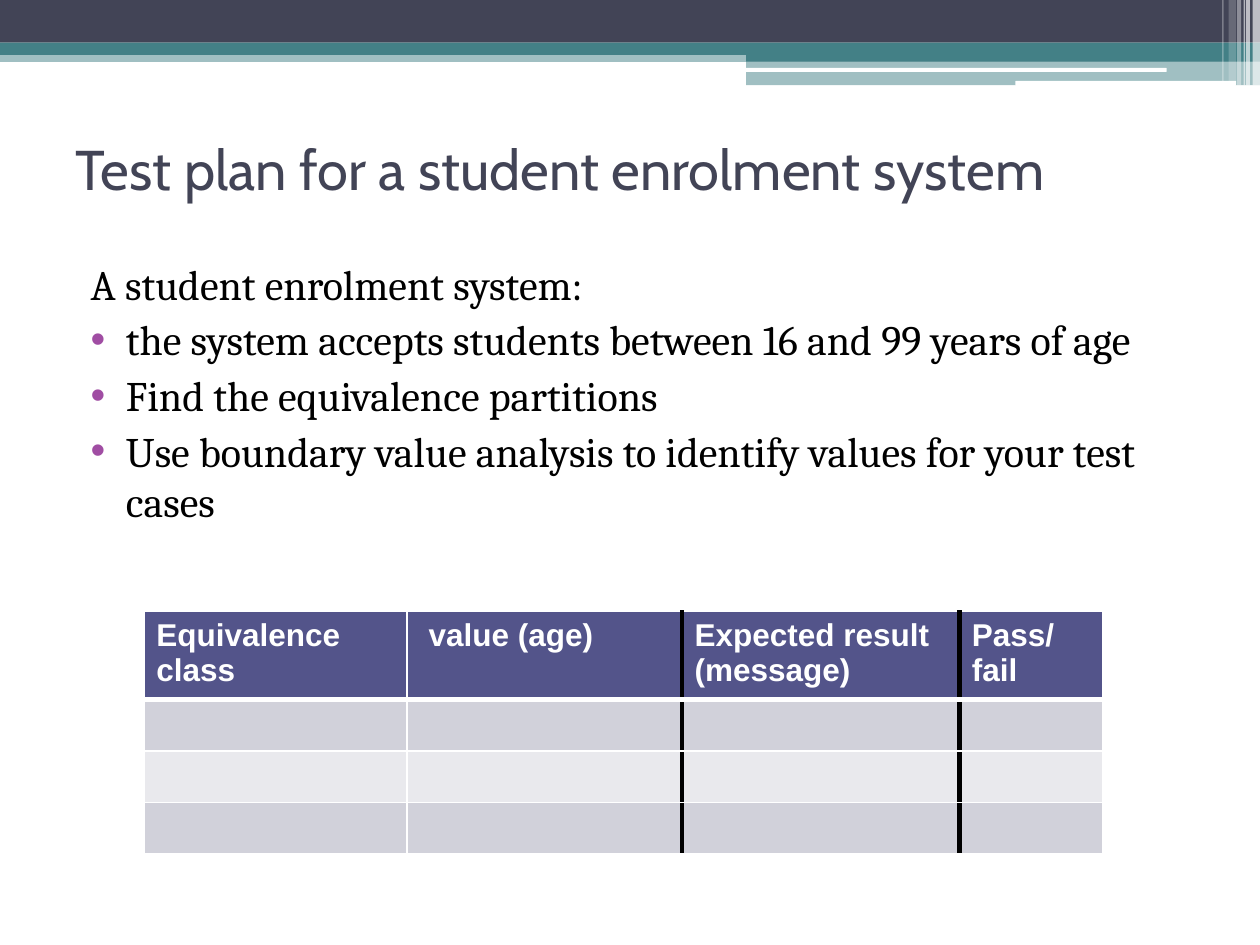
from dataclasses import dataclass

from lxml.etree import SubElement
from pptx import Presentation
from pptx.dml.color import RGBColor
from pptx.enum.shapes import MSO_SHAPE as Preset
from pptx.enum.text import MSO_ANCHOR as Anchor
from pptx.oxml import parse_xml
from pptx.oxml.ns import nsdecls, qn
from pptx.util import Cm, Pt


@dataclass(frozen=True)
class Theme:
    """Colours, fonts and type sizes of the deck."""
    ink: str = "000000"
    paper: str = "FFFFFF"
    slate: str = "424456"
    teal: str = "438086"
    bullet: str = "A04DA3"
    header: str = "53548A"
    bands: tuple = ("D1D1DA", "E9E9ED")
    title_font: str = "Cabin"
    body_font: str = "Cambria"
    table_font: str = "Arial"
    title_size: int = 32
    body_size: int = 24
    table_size: int = 18


@dataclass(frozen=True)
class Box:
    """A rectangle in centimetres."""
    left: float
    top: float
    width: float
    height: float

    def inner(self, left, top, width, height):
        """Return a box placed relative to this one."""
        return Box(self.left + left, self.top + top, width, height)

    def lengths(self):
        """Return left, top, width and height as slide lengths."""
        return [Cm(n) for n in (self.left, self.top, self.width, self.height)]


THEME = Theme()
POINTS = [
    "the system accepts students between 16 and 99 years of age",
    "Find the equivalence partitions",
    "Use boundary value analysis to identify values for your test cases",
]
HEADINGS = ["Equivalence class", " value (age)", "Expected result (message)", "Pass/fail"]
COLUMN_WIDTHS = [5.31, 5.54, 5.59, 2.9]
ROW_HEIGHTS = [1.65, 1.04, 1.04, 1.04]


def write(para, text, *, font, size, color, bold=False):
    """Add formatted text to a paragraph."""
    span = para.add_run()
    span.text = text
    span.font.name = font
    span.font.size = Pt(size)
    span.font.bold = bold
    span.font.color.rgb = RGBColor.from_string(color)


def add_strip(page, box, color, opacity=100, preset=Preset.RECTANGLE):
    """Add a flat strip without outline or shadow."""
    strip = page.shapes.add_shape(preset, *box.lengths())
    strip.shadow.inherit = False
    strip.line.fill.background()
    strip.fill.solid()
    strip.fill.fore_color.rgb = RGBColor.from_string(color)
    if opacity < 100:
        shade = strip._element.spPr.find(".//" + qn("a:srgbClr"))
        SubElement(shade, qn("a:alpha"), val=str(opacity * 1000))


def add_top_band(page, box):
    """Draw the layered band with its fading right edge."""
    half, step = box.width, 15.04
    for place, color, opacity in [
        ((0, 1.02, half, 0.23), THEME.teal, 50),
        ((0, 0, half, 0.86), THEME.slate, 100),
        ((0, 0.86, half, 0.25), THEME.teal, 100),
        ((step, 0.99, half - step, 0.25), THEME.teal, 100),
        ((step, 1.22, half - step, 0.5), THEME.teal, 50),
    ]:
        add_strip(page, box.inner(*place), color, opacity)
    for place in [(15.01, 1.37, 8.51, 0.08), (20.47, 1.63, 4.45, 0.1)]:
        add_strip(page, box.inner(*place), THEME.paper, preset=Preset.ROUNDED_RECTANGLE)
    for left, width, height, opacity in [
        (25.25, 0.15, box.height, 65),
        (25.12, 0.08, box.height, 65),
        (25.07, 0.03, box.height, 60),
        (24.94, 0.08, box.height, 40),
        (24.77, 0.15, 1.63, 20),
        (24.64, 0.03, 1.63, 30),
    ]:
        add_strip(page, box.inner(left, 0, width, height), THEME.paper, opacity)


def add_frame(page, box, anchor):
    """Add a wrapping text box and return its text frame."""
    frame = page.shapes.add_textbox(*box.lengths()).text_frame
    frame.word_wrap = True
    frame.vertical_anchor = anchor
    return frame


def add_title(page, box, text):
    """Place the slide title."""
    frame = add_frame(page, box, Anchor.MIDDLE)
    write(frame.paragraphs[0], text, font=THEME.title_font,
          size=THEME.title_size, color=THEME.slate)


def set_indent(para, bulleted):
    """Give a paragraph a hanging indent and, if asked, a bullet."""
    props = para._p.get_or_add_pPr()
    props.set("marL", str(Cm(1.02)))
    props.set("indent", str(Cm(-0.71)))
    if bulleted:
        color = SubElement(props, qn("a:buClr"))
        SubElement(color, qn("a:srgbClr"), val=THEME.bullet)
        SubElement(props, qn("a:buFont"), typeface=THEME.table_font)
        SubElement(props, qn("a:buChar"), char="•")
    else:
        SubElement(props, qn("a:buNone"))


def add_body(page, box, lead, points):
    """Place a lead line followed by bulleted points."""
    frame = add_frame(page, box, Anchor.TOP)
    for index, text in enumerate([lead, *points]):
        para = frame.add_paragraph() if index else frame.paragraphs[0]
        para.space_before = Pt(3)
        set_indent(para, bulleted=index > 0)
        write(para, text, font=THEME.body_font, size=THEME.body_size, color=THEME.ink)


def set_borders(cell, **sides):
    """Set cell borders, each given as a colour and a width in points."""
    props = cell._tc.get_or_add_tcPr()
    for index, side in enumerate("LRTB"):
        color, width = sides[side]
        props.insert(index, parse_xml(
            f'<a:ln{side} {nsdecls("a")} w="{Pt(width)}"><a:solidFill>'
            f'<a:srgbClr val="{color}"/></a:solidFill></a:ln{side}>'))


def add_test_table(page, box):
    """Place the test case table with heavy rules around the result column."""
    table = page.shapes.add_table(len(ROW_HEIGHTS), len(HEADINGS), *box.lengths()).table
    for column, width in zip(table.columns, COLUMN_WIDTHS):
        column.width = Cm(width)
    thin, thick, heavy = (THEME.paper, 1), (THEME.paper, 3), (THEME.ink, 3)
    for r, height in enumerate(ROW_HEIGHTS):
        table.rows[r].height = Cm(height)
        for c, heading in enumerate(HEADINGS):
            cell = table.cell(r, c)
            cell.fill.solid()
            color = THEME.bands[(r - 1) % 2] if r else THEME.header
            cell.fill.fore_color.rgb = RGBColor.from_string(color)
            set_borders(cell, L=heavy if c in (2, 3) else thin,
                        R=heavy if c in (1, 2) else thin,
                        T=thick if r == 1 else thin,
                        B=thick if r == 0 else thin)
            if r == 0:
                write(cell.text_frame.paragraphs[0], heading, font=THEME.table_font,
                      size=THEME.table_size, color=THEME.paper, bold=True)


def main():
    """Build and save the deck."""
    deck = Presentation()
    deck.slide_width, deck.slide_height = Cm(25.4), Cm(19.05)
    page = deck.slides.add_slide(deck.slide_layouts[6])
    add_top_band(page, Box(0, 0, 25.4, 1.73))
    add_title(page, Box(1.27, 1.9, 22.86, 2.97), "Test plan for a student enrolment system")
    add_body(page, Box(1.27, 5.08, 22.86, 13.18), "A student enrolment system:", POINTS)
    add_test_table(page, Box(2.9, 12.32, sum(COLUMN_WIDTHS), sum(ROW_HEIGHTS)))
    deck.save("out.pptx")


if __name__ == "__main__":
    main()
